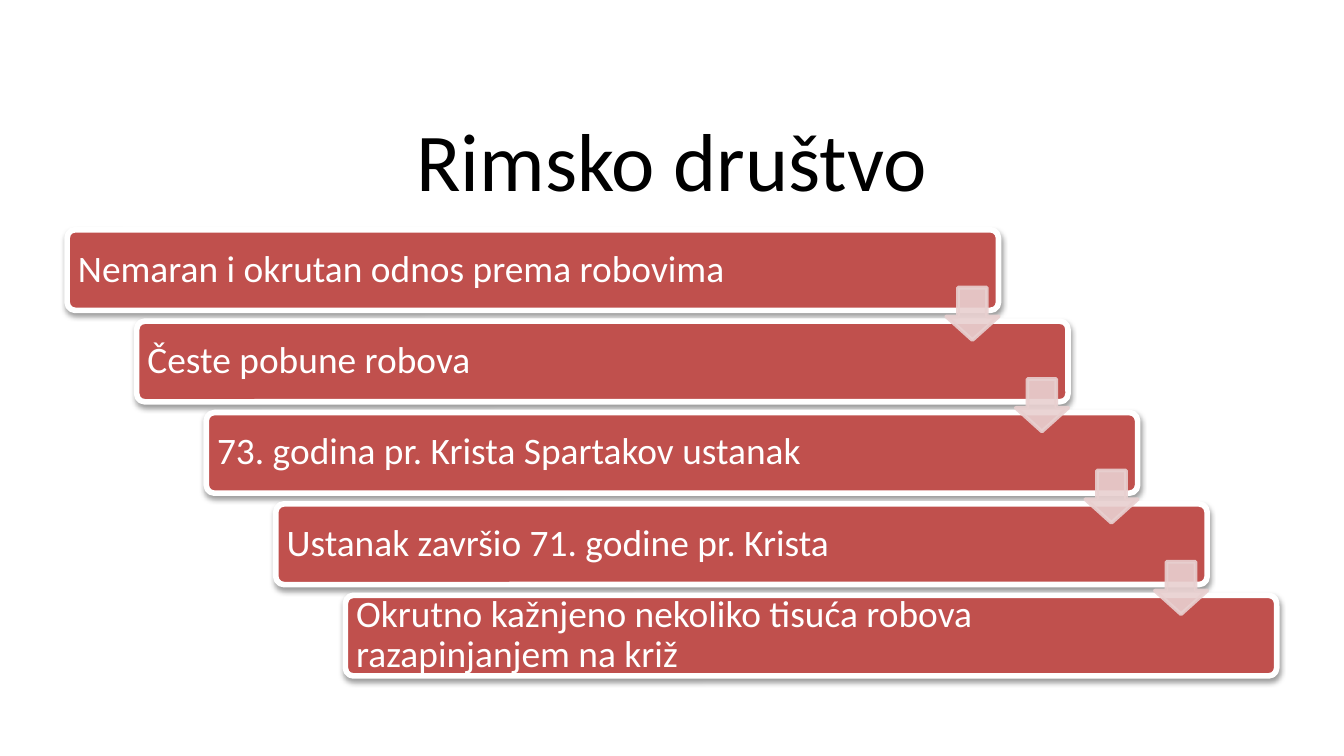
from lxml import etree
from pptx import Presentation
from pptx.dml.color import RGBColor
from pptx.enum.shapes import MSO_SHAPE
from pptx.enum.text import MSO_ANCHOR, PP_ALIGN
from pptx.oxml.ns import qn
from pptx.util import Inches, Pt

ROUNDED = MSO_SHAPE.ROUNDED_RECTANGLE
DOWN_ARROW = MSO_SHAPE.DOWN_ARROW
MIDDLE = MSO_ANCHOR.MIDDLE
LEFT, CENTER = PP_ALIGN.LEFT, PP_ALIGN.CENTER

BLACK = RGBColor(0x00, 0x00, 0x00)
WHITE = RGBColor(0xFF, 0xFF, 0xFF)
BRICK = RGBColor(0xC0, 0x50, 0x4D)
BLUSH = RGBColor(0xE8, 0xD0, 0xD0)

STEPS = [
    "Nemaran i okrutan odnos prema robovima",
    "Česte pobune robova",
    "73. godina pr. Krista Spartakov ustanak",
    "Ustanak završio 71. godine pr. Krista",
    "Okrutno kažnjeno nekoliko tisuća robova razapinjanjem na križ",
]
SLIDE_WIDTH = 10
SLIDE_HEIGHT = SLIDE_WIDTH * 9 / 16
MARGIN, CONTENT_WIDTH = 0.5, 9
BAR_WIDTH, BAR_HEIGHT, BAR_TOP = 6.93, 0.6, 1.71
ARROW_SIZE, ARROW_LEFT, ARROW_TOP = 0.39, 7.04, 2.14
FIRST_LABEL_WIDTH, LABEL_WIDTH = 6.25, 6.02
SHIFT = (CONTENT_WIDTH - BAR_WIDTH) / (len(STEPS) - 1)
PITCH = 0.68


class StaircaseSlide:
    font_name = "Calibri"

    def __init__(self, slide):
        self.slide = slide

    def text(self, box, wording, size, color, align=LEFT, inset=0.08):
        frame = self.slide.shapes.add_textbox(*map(Inches, box)).text_frame
        margin = Inches(inset)
        frame_format = {
            "word_wrap": True,
            "vertical_anchor": MIDDLE,
            "margin_left": margin,
            "margin_right": margin,
            "margin_top": margin,
            "margin_bottom": margin,
        }
        for name, value in frame_format.items():
            setattr(frame, name, value)
        paragraph = frame.paragraphs[0]
        paragraph.text = wording
        paragraph.alignment = align
        paragraph.line_spacing = 0.9
        font = paragraph.runs[0].font
        for name, value in {"name": self.font_name, "size": Pt(size)}.items():
            setattr(font, name, value)
        font.color.rgb = color

    def outlined(self, preset, box, adjustments, fill, line, width):
        shape = self.slide.shapes.add_shape(preset, *map(Inches, box))
        for index, value in enumerate(adjustments):
            shape.adjustments[index] = value
        shape.fill.solid()
        shape.fill.fore_color.rgb = fill
        shape.line.color.rgb = line
        shape.line.width = Pt(width)
        shape.shadow.inherit = False
        return shape

    def bar(self, box):
        bar = self.outlined(ROUNDED, box, [0.1], BRICK, WHITE, 3)
        effects = bar._element.spPr.find(qn("a:effectLst"))
        shadow = etree.SubElement(
            effects, qn("a:outerShdw"), blurRad=str(Pt(3.1)),
            dist=str(Pt(1.6)), dir="5400000", rotWithShape="0")
        color = etree.SubElement(shadow, qn("a:srgbClr"), val=str(BLACK))
        etree.SubElement(color, qn("a:alpha"), val="38000")

    def arrow(self, box):
        arrow = self.outlined(DOWN_ARROW, box, [0.55, 0.45], BLUSH, BLUSH, 2)
        for color in arrow._element.spPr.iter(qn("a:srgbClr")):
            etree.SubElement(color, qn("a:alpha"), val="90000")


def main():
    presentation = Presentation()
    presentation.slide_width = Inches(SLIDE_WIDTH)
    presentation.slide_height = Inches(SLIDE_HEIGHT)
    blank = presentation.slide_layouts[6]
    staircase = StaircaseSlide(presentation.slides.add_slide(blank))

    staircase.text((MARGIN, 0.84, CONTENT_WIDTH, 0.78), "Rimsko društvo",
                   44, BLACK, CENTER)
    for row, step in enumerate(STEPS):
        left, top = MARGIN + row * SHIFT, BAR_TOP + row * PITCH
        label_width = LABEL_WIDTH if row else FIRST_LABEL_WIDTH
        staircase.bar((left, top, BAR_WIDTH, BAR_HEIGHT))
        staircase.text((left, top, label_width, BAR_HEIGHT), step, 20, WHITE)
    for row in range(len(STEPS) - 1):
        staircase.arrow((ARROW_LEFT + row * SHIFT, ARROW_TOP + row * PITCH,
                         ARROW_SIZE, ARROW_SIZE))
    presentation.save("out.pptx")


if __name__ == "__main__":
    main()
